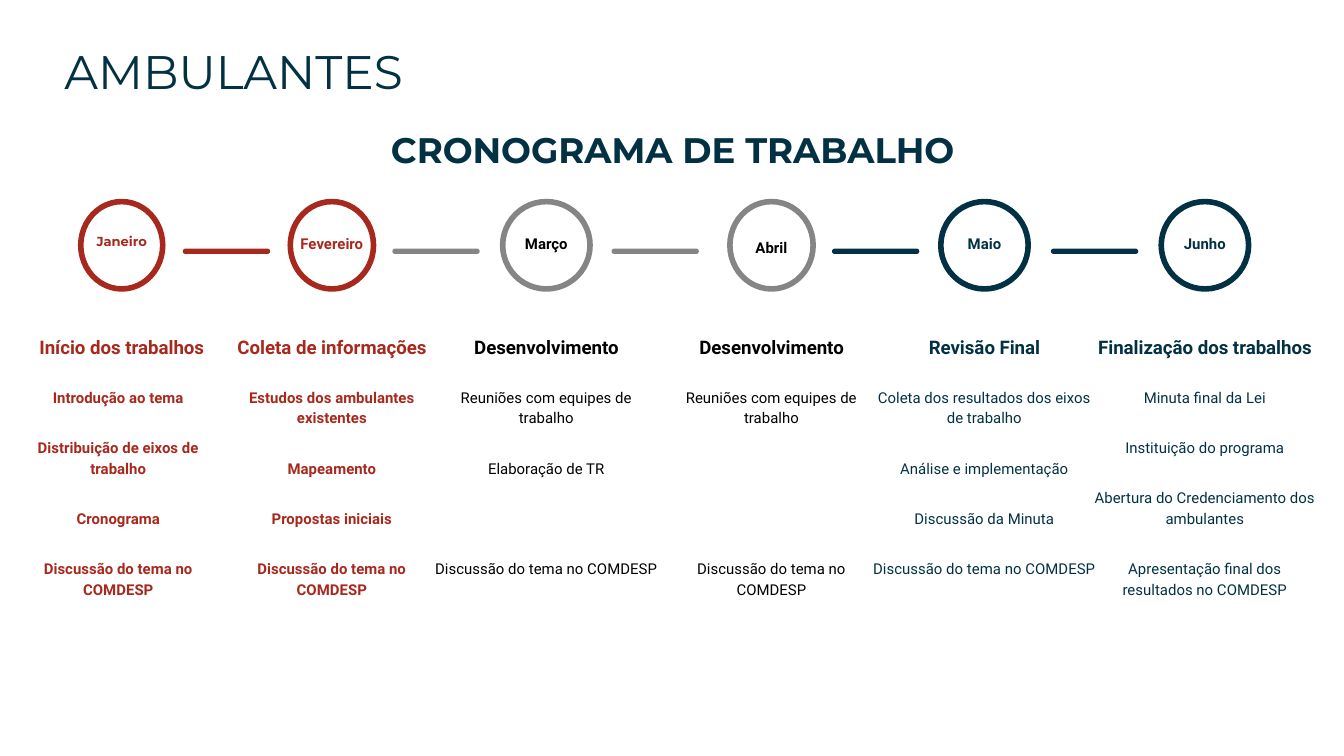
import pptx
import pptx.util
import pptx.dml.color
import pptx.enum.shapes
import pptx.enum.text

Pt = pptx.util.Pt
RED = pptx.dml.color.RGBColor(0xA7, 0x29, 0x1E)
GREY = pptx.dml.color.RGBColor(0x85, 0x85, 0x85)
NAVY = pptx.dml.color.RGBColor(0x03, 0x31, 0x44)
BLACK = pptx.dml.color.RGBColor(0, 0, 0)
SHAPES = pptx.enum.shapes.MSO_SHAPE
ALIGN = pptx.enum.text.PP_ALIGN
ANCHOR = pptx.enum.text.MSO_ANCHOR

TALK = "Discussão do tema no COMDESP"
MEET = "Reuniões com equipes de trabalho"

# NONE
MONTHS = [
    dict(name="Janeiro", center=65.2, ring=43.9, label=43.9, width=126.7,
         line=RED, ink=RED, bold=True, font="Montserrat", size=7, body_shift=-1.8,
         heading="Início dos trabalhos",
         tasks=["Introdução ao tema", "Distribuição de eixos de trabalho",
                "Cronograma", TALK]),
    dict(name="Fevereiro", center=177.8, ring=44.6, label=52.6, width=128.2,
         line=RED, ink=RED, bold=True, heading="Coleta de informações",
         tasks=["Estudos dos ambulantes existentes", "Mapeamento",
                "Propostas iniciais", TALK]),
    dict(name="Março", center=292.7, ring=46.8, label=46.8, width=134.6,
         line=GREY, ink=BLACK, heading="Desenvolvimento",
         tasks=[MEET, "Elaboração de TR", None, TALK]),
    dict(name="Abril", center=413.3, ring=44.6, label=32.4, width=128.2,
         line=GREY, ink=BLACK, label_shift=2.2, heading="Desenvolvimento",
         tasks=[MEET, None, None, TALK]),
    dict(name="Maio", center=527.4, ring=46.8, label=34.6, width=134.6,
         line=NAVY, ink=NAVY, heading="Revisão Final",
         tasks=["Coleta dos resultados dos eixos de trabalho",
                "Análise e implementação", "Discussão da Minuta", TALK]),
    dict(name="Junho", center=645.5, ring=46.8, label=37.4, width=134.6,
         line=NAVY, ink=NAVY, heading="Finalização dos trabalhos",
         tasks=["Minuta final da Lei", "Instituição do programa",
                "Abertura do Credenciamento dos ambulantes",
                "Apresentação final dos resultados no COMDESP"]),
]
BAR_LEFTS = [97.9, 210.2, 327.6, 445.7, 563]
BAR_WIDTH, BAR_HEIGHT, BAR_TOP = 46.8, 2.9, 133.2
RING_TOP, RING_HEIGHT = 108, 46.8
LABEL_TOP, HEADING_TOP, BODY_TOP = 118.8, 163.4, 199.4
TASK_GAP, TASK_PITCH = 16, 27


def add_text(shapes, lines, left, top, width, height, *, size, color,
             font="Roboto", bold=False, align=ALIGN.CENTER,
             anchor=ANCHOR.TOP, spacing=1.15):
    box = shapes.add_textbox(Pt(left), Pt(top), Pt(width), Pt(height))
    frame = box.text_frame
    frame.word_wrap = True
    frame.vertical_anchor = anchor
    frame.margin_left = frame.margin_right = Pt(7.2)
    frame.margin_top = frame.margin_bottom = Pt(7.2)
    skipped = 0
    for index, line in enumerate(lines):
        if line is None:
            skipped += 1
            continue
        para = frame.add_paragraph() if index else frame.paragraphs[0]
        para.alignment = align
        para.line_spacing = spacing
        if index:
            para.space_before = Pt(TASK_GAP + skipped * TASK_PITCH)
        skipped = 0
        span = para.add_run()
        span.text = line
        span.font.name = font
        span.font.size = Pt(size)
        span.font.bold = bold
        span.font.color.rgb = color
    return box


def add_bar(page, left, color):
    bar = page.shapes.add_shape(SHAPES.ROUNDED_RECTANGLE, Pt(left), Pt(BAR_TOP),
                                Pt(BAR_WIDTH), Pt(BAR_HEIGHT))
    bar.adjustments[0] = 0.5
    bar.shadow.inherit = False
    bar.fill.solid()
    bar.fill.fore_color.rgb = color
    bar.line.fill.background()


def add_month(page, month):
    shapes = page.shapes.add_group_shape().shapes
    center, width, ink = month["center"], month["width"], month["ink"]
    left = center - width / 2
    ring = shapes.add_shape(SHAPES.OVAL, Pt(center - month["ring"] / 2), Pt(RING_TOP),
                            Pt(month["ring"]), Pt(RING_HEIGHT))
    ring.shadow.inherit = False
    ring.fill.background()
    ring.line.color.rgb = month["line"]
    ring.line.width = Pt(3)
    add_text(shapes, [month["name"]], center - month["label"] / 2,
             LABEL_TOP + month.get("label_shift", 0), month["label"], 25.2,
             size=month.get("size", 8), font=month.get("font", "Roboto"),
             color=ink, bold=True)
    add_text(shapes, [month["heading"]], left, HEADING_TOP, width, 35.3,
             size=10, color=ink, bold=True, anchor=ANCHOR.BOTTOM)
    add_text(shapes, month["tasks"], left + month.get("body_shift", 0), BODY_TOP,
             width, 110, size=8, color=ink, bold=month.get("bold", False))


def main():
    deck = pptx.Presentation()
    deck.slide_width, deck.slide_height = Pt(720), Pt(405)
    page = deck.slides.add_slide(deck.slide_layouts[6])
    add_text(page.shapes, ["AMBULANTES"], 27.4, 15.8, 517, 45.4, size=25.2,
             color=NAVY, font="Montserrat", align=ALIGN.LEFT, spacing=1.0)
    add_text(page.shapes, ["CRONOGRAMA DE TRABALHO"], 43.2, 61.2, 634.3, 37.4,
             size=19, color=NAVY, font="Montserrat", bold=True, spacing=1.0)
    for left, following in zip(BAR_LEFTS, MONTHS[1:]):
        add_bar(page, left, following["line"])
    for month in MONTHS:
        add_month(page, month)
    deck.save("out.pptx")


if __name__ == "__main__":
    main()
